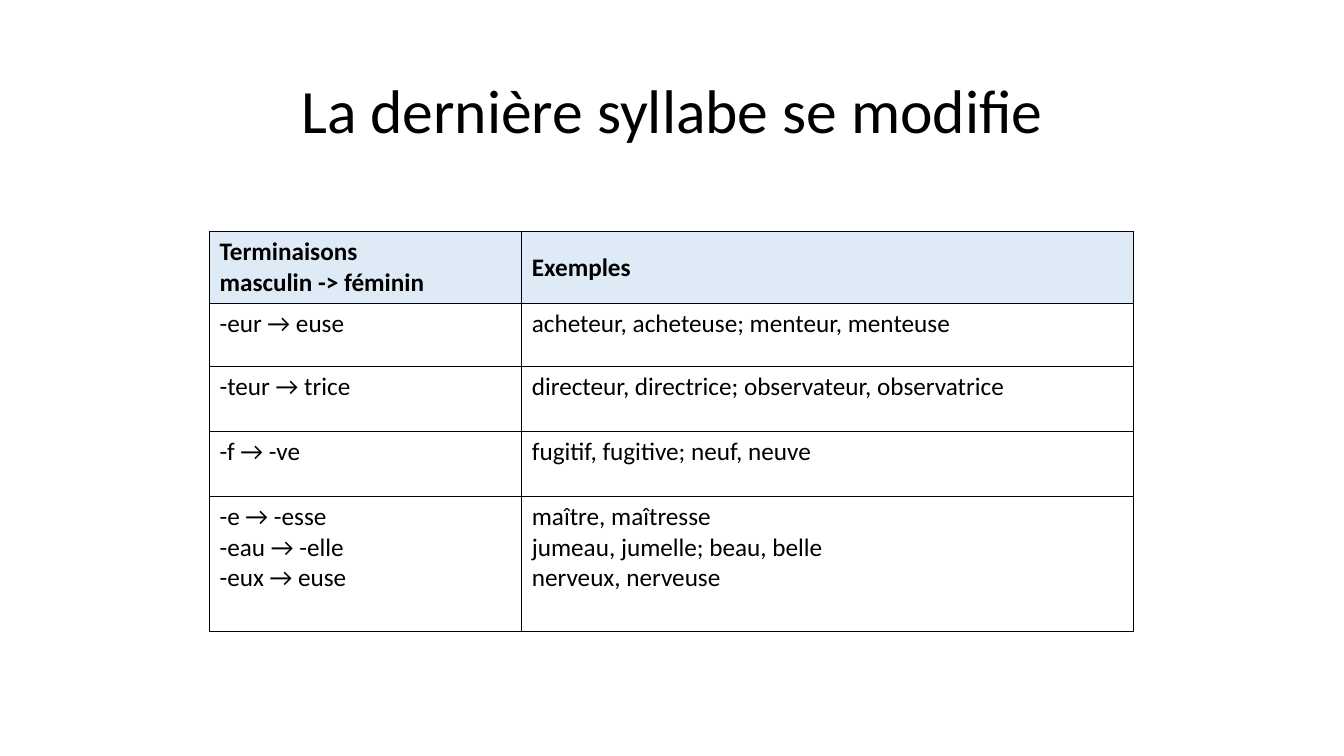
from lxml.etree import SubElement
from pptx import Presentation
from pptx.dml.color import RGBColor
from pptx.enum.text import MSO_ANCHOR as Anchor, PP_ALIGN as Align
from pptx.oxml.ns import qn
from pptx.util import Cm, Pt

TITLE = "La dernière syllabe se modifie"
ROWS = [  # height in cm, endings, examples
    (1.8, ["Terminaisons", "masculin -> féminin"], ["Exemples"]),
    (1.6, ["-eur → euse"], ["acheteur, acheteuse; menteur, menteuse"]),
    (1.63, ["-teur → trice"], ["directeur, directrice; observateur, observatrice"]),
    (1.63, ["-f → -ve"], ["fugitif, fugitive; neuf, neuve"]),
    (3.4, ["-e → -esse", "-eau → -elle", "-eux → euse"],
     ["maître, maîtresse", "jumeau, jumelle; beau, belle", "nerveux, nerveuse"]),
]
COL_WIDTHS = [7.87, 15.42]

BLACK = RGBColor(0x00, 0x00, 0x00)
WHITE = RGBColor(0xFF, 0xFF, 0xFF)
PALE_BLUE = RGBColor(0xDE, 0xEB, 0xF7)


def write(tf, lines, size=18, bold=False, align=Align.LEFT, spacing=1.0):
    for i, line in enumerate(lines):
        p = tf.paragraphs[0] if i == 0 else tf.add_paragraph()
        p.alignment, p.line_spacing = align, spacing
        r = p.add_run()
        r.text = line
        r.font.name, r.font.size, r.font.bold = "Calibri", Pt(size), bold
        r.font.color.rgb = BLACK


def add_borders(cell, color=BLACK, width=1):
    tc_pr = cell._tc.get_or_add_tcPr()
    for side in ("lnL", "lnR", "lnT", "lnB"):
        ln = SubElement(tc_pr, qn(f"a:{side}"), w=str(Pt(width)))
        fill = SubElement(ln, qn("a:solidFill"))
        SubElement(fill, qn("a:srgbClr"), val=str(color))


def add_endings_table(slide):
    height = sum(row[0] for row in ROWS)
    table = slide.shapes.add_table(
        len(ROWS), len(COL_WIDTHS), Cm(5.28), Cm(5.84),
        Cm(sum(COL_WIDTHS)), Cm(height)).table
    table.horz_banding = False
    for col, width in zip(table.columns, COL_WIDTHS):
        col.width = Cm(width)
    for i, (row_height, *texts) in enumerate(ROWS):
        header = i == 0
        table.rows[i].height = Cm(row_height)
        for j, lines in enumerate(texts):
            cell = table.cell(i, j)
            add_borders(cell)
            cell.fill.solid()
            cell.fill.fore_color.rgb = PALE_BLUE if header else WHITE
            cell.vertical_anchor = Anchor.MIDDLE if header else Anchor.TOP
            write(cell.text_frame, lines, bold=header)


def main():
    prs = Presentation()
    prs.slide_width, prs.slide_height = Cm(33.87), Cm(19.05)
    s = prs.slides.add_slide(prs.slide_layouts[5])
    title = s.shapes.title
    title.left, title.top = Cm(2.34), Cm(1.02)
    title.width, title.height = Cm(29.21), Cm(3.68)
    title.text_frame.vertical_anchor = Anchor.MIDDLE
    write(title.text_frame, [TITLE], size=44, align=Align.CENTER, spacing=0.9)
    add_endings_table(s)
    prs.save("out.pptx")


if __name__ == "__main__":
    main()
